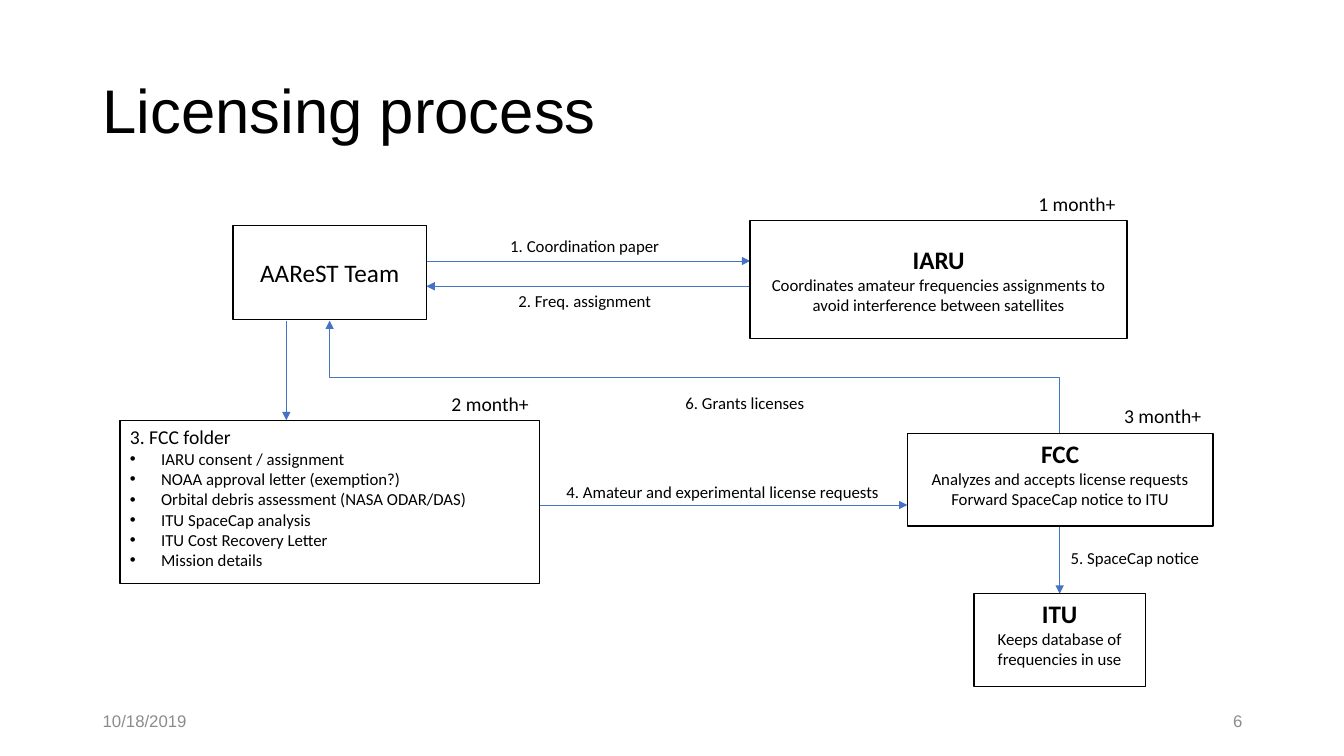
"""Build the licensing process slide: boxes, arrows and labels."""
from dataclasses import dataclass

from lxml.etree import SubElement
from pptx import Presentation
from pptx.dml.color import RGBColor
from pptx.enum.shapes import MSO_CONNECTOR as Route, MSO_SHAPE as Preset
from pptx.enum.text import MSO_ANCHOR as Anchor, PP_ALIGN as Align
from pptx.oxml.ns import qn
from pptx.slide import Slide
from pptx.text.text import TextFrame
from pptx.util import Emu, Pt

BLACK = RGBColor(0x00, 0x00, 0x00)
GREY = RGBColor(0x8C, 0x8C, 0x8C)
BLUE = RGBColor(0x44, 0x72, 0xC4)
EMU_PER_PX = 9144
BULLET_INDENT = 31


@dataclass(frozen=True)
class Line:
    text: str
    size: int = 12
    bold: bool = False
    bullet: bool = False


@dataclass(frozen=True)
class Block:
    left: int
    top: int
    width: int
    height: int
    lines: tuple[Line, ...]
    align: Align = Align.LEFT
    anchor: Anchor = Anchor.TOP
    font: str = "Calibri"
    color: RGBColor = BLACK
    outlined: bool = False
    wrap: bool = True
    spacing: float = 1.0


@dataclass(frozen=True)
class Arrow:
    begin: tuple[int, int]
    end: tuple[int, int]
    arrowhead: str = "tailEnd"
    route: Route = Route.STRAIGHT
    rotation: int = 0


def party(left: int, top: int, width: int, height: int, *lines: Line,
          align: Align = Align.CENTER, anchor: Anchor = Anchor.TOP) -> Block:
    """Describe an outlined box of the process."""
    return Block(left, top, width, height, lines, align, anchor, outlined=True)


def step(left: int, top: int, width: int, text: str, align: Align = Align.LEFT) -> Block:
    """Describe the label of a numbered step."""
    return Block(left, top, width, 30, (Line(text),), align)


def duration(left: int, top: int, text: str) -> Block:
    """Describe the waiting time above a box."""
    return Block(left, top, 97, 34, (Line(text, 14),), wrap=False)


def footer(left: int, text: str, align: Align) -> Block:
    """Describe a grey footer text."""
    return Block(left, 695, 300, 40, (Line(text),), align, Anchor.MIDDLE, "Arial", GREY)


FOLDER_ITEMS = (
    "IARU consent / assignment",
    "NOAA approval letter (exemption?)",
    "Orbital debris assessment (NASA ODAR/DAS)",
    "ITU SpaceCap analysis",
    "ITU Cost Recovery Letter",
    "Mission details",
)

BLOCKS = (
    Block(92, 40, 1150, 145, (Line("Licensing process", 44),),
          anchor=Anchor.MIDDLE, font="Arial", spacing=0.9),
    footer(92, "10/18/2019", Align.LEFT),
    footer(942, "6", Align.RIGHT),
    party(231, 224, 192, 93, Line("AAReST Team", 18), anchor=Anchor.MIDDLE),
    party(744, 219, 374, 117, Line("IARU", 18, True),
          Line("Coordinates amateur frequencies assignments to "
               "avoid interference between satellites"), anchor=Anchor.MIDDLE),
    party(119, 417, 416, 162, Line("3. FCC folder", 14),
          *(Line(item, bullet=True) for item in FOLDER_ITEMS), align=Align.LEFT),
    party(900, 430, 303, 92, Line("FCC", 18, True),
          Line("Analyzes and accepts license requests"),
          Line("Forward SpaceCap notice to ITU")),
    party(966, 589, 170, 92, Line("ITU", 18, True),
          Line("Keeps database of frequencies in use")),
    step(485, 229, 190, "1. Coordination paper", Align.CENTER),
    step(485, 284, 190, "2. Freq. assignment", Align.CENTER),
    step(552, 473, 333, "4. Amateur and experimental license requests"),
    step(1052, 538, 153, "5. SpaceCap notice"),
    step(670, 385, 142, "6. Grants licenses"),
    duration(1020, 185, "1 month+"),
    duration(438, 384, "2 month+"),
    duration(1105, 396, "3 month+"),
)

ARROWS = (
    Arrow((423, 259), (744, 259)),
    Arrow((423, 284), (744, 284), "headEnd"),
    Arrow((284, 318), (284, 417)),
    Arrow((535, 501), (900, 501)),
    Arrow((1051, 522), (1051, 589)),
    Arrow((745, 12), (633, 736), "headEnd", Route.ELBOW, 270),
)


def px(length: int) -> Emu:
    """Turn px into EMU."""
    return Emu(length * EMU_PER_PX)


def write_lines(frame: TextFrame, block: Block) -> None:
    """Fill a text frame with the lines of its block."""
    for index, line in enumerate(block.lines):
        paragraph = frame.paragraphs[0] if index == 0 else frame.add_paragraph()
        paragraph.alignment = block.align
        paragraph.line_spacing = block.spacing
        if line.bullet:
            properties = paragraph._p.get_or_add_pPr()
            properties.set("marL", str(px(BULLET_INDENT)))
            properties.set("indent", str(px(-BULLET_INDENT)))
            SubElement(properties, qn("a:buFont"), typeface="Arial")
            SubElement(properties, qn("a:buChar"), char="•")
        run = paragraph.add_run()
        run.text = line.text
        run.font.color.rgb = block.color
        text_format = {"name": block.font, "size": Pt(line.size), "bold": line.bold}
        for attribute, value in text_format.items():
            setattr(run.font, attribute, value)


def draw_block(slide: Slide, block: Block) -> None:
    """Draw a box or a free text."""
    place = [px(n) for n in (block.left, block.top, block.width, block.height)]
    if block.outlined:
        shape = slide.shapes.add_shape(Preset.RECTANGLE, *place)
        shape.shadow.inherit = False
        shape.fill.background()
        shape.line.color.rgb = BLACK
        shape.line.width = Pt(1)
    else:
        shape = slide.shapes.add_textbox(*place)
    frame_format = {"word_wrap": block.wrap, "vertical_anchor": block.anchor}
    for attribute, value in frame_format.items():
        setattr(shape.text_frame, attribute, value)
    write_lines(shape.text_frame, block)


def draw_arrow(slide: Slide, arrow: Arrow) -> None:
    """Draw a connector with one arrowhead."""
    points = [px(n) for n in (*arrow.begin, *arrow.end)]
    connector = slide.shapes.add_connector(arrow.route, *points)
    connector.line.color.rgb = BLUE
    connector.line.width = Pt(0.5)
    properties = connector._element.spPr
    if arrow.rotation:
        properties.find(qn("a:xfrm")).set("rot", str(arrow.rotation * 60000))
    SubElement(properties.find(qn("a:ln")), qn(f"a:{arrow.arrowhead}"), type="triangle")
    SubElement(properties, qn("a:effectLst"))


def main() -> None:
    """Build and save the slide."""
    deck = Presentation()
    deck.slide_width, deck.slide_height = px(1333), px(750)
    slide = deck.slides.add_slide(deck.slide_layouts[6])
    for arrow in ARROWS:
        draw_arrow(slide, arrow)
    for block in BLOCKS:
        draw_block(slide, block)
    deck.save("out.pptx")


if __name__ == "__main__":
    main()
